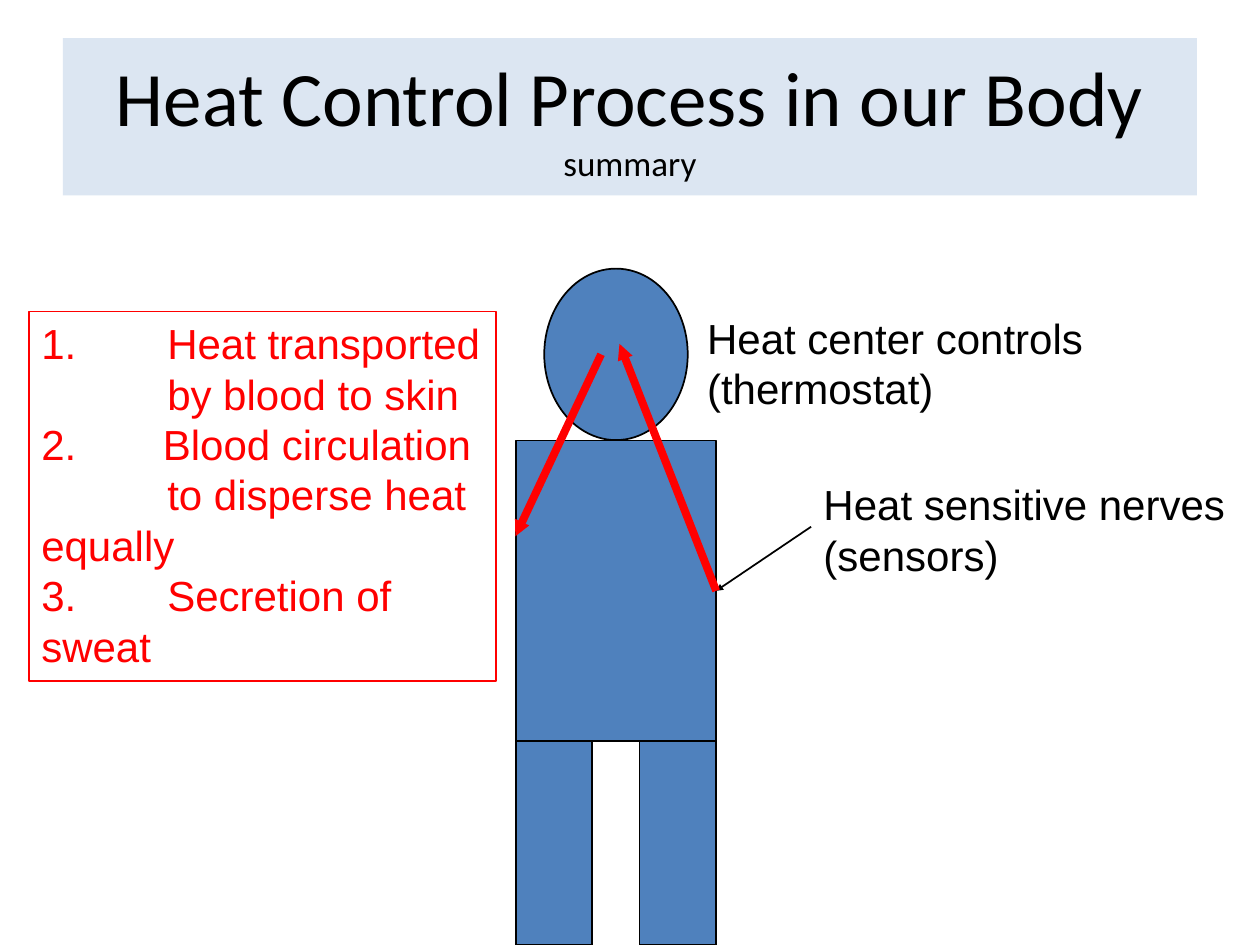
import pptx
import pptx.dml.color
import pptx.enum.shapes
import pptx.enum.text
import pptx.oxml.ns
import pptx.util
from lxml import etree

Pt = pptx.util.Pt
SHAPE = pptx.enum.shapes.MSO_SHAPE
ALIGN = pptx.enum.text.PP_ALIGN
ANCHOR = pptx.enum.text.MSO_ANCHOR
qn = pptx.oxml.ns.qn

BLACK, RED, BODY_BLUE, PALE_BLUE = "000000", "FF0000", "4F81BD", "DCE6F2"


def color(value):
    return pptx.dml.color.RGBColor.from_string(value)


def set_font(r, size, name, value):
    for key, val in {"size": Pt(size), "name": name}.items():
        setattr(r.font, key, val)
    r.font.color.rgb = color(value)


def add_box(shapes, kind, left, top, width, height, fill=None, line=None):
    s = shapes.add_shape(kind, Pt(left), Pt(top), Pt(width), Pt(height))
    s.shadow.inherit = False
    if fill:
        s.fill.solid()
        s.fill.fore_color.rgb = color(fill)
    else:
        s.fill.background()
    if line:
        s.line.color.rgb = color(line)
        s.line.width = Pt(1)
    else:
        s.line.fill.background()
    return s


def write_lines(tf, lines, value):
    for i, text in enumerate(lines):
        p = tf.paragraphs[0] if i == 0 else tf.add_paragraph()
        p.alignment = ALIGN.LEFT
        r = p.add_run()
        r.text = text
        set_font(r, 24, "Arial", value)


def number_paragraph(p, start, indent):
    """Give the paragraph an automatic number with a hanging indent."""
    pPr = p._p.get_or_add_pPr()
    pPr.set("marL", str(Pt(indent)))
    pPr.set("indent", str(-Pt(indent)))
    etree.SubElement(pPr, qn("a:buAutoNum"), type="arabicPeriod", startAt=str(start))


def set_tabs(p, step, count):
    """Set evenly spaced left tab stops."""
    tabs = etree.SubElement(p._p.get_or_add_pPr(), qn("a:tabLst"))
    for i in range(1, count + 1):
        etree.SubElement(tabs, qn("a:tab"), pos=str(Pt(step * i)), algn="l")


def add_label(shapes, left, top, width, lines):
    s = shapes.add_textbox(Pt(left), Pt(top), Pt(width), Pt(65.5))
    s.text_frame.word_wrap = False
    write_lines(s.text_frame, lines, BLACK)


def add_arrow(shapes, start, end, value, width):
    c = shapes.add_connector(pptx.enum.shapes.MSO_CONNECTOR.STRAIGHT,
                             *[Pt(v) for v in start + end])
    c.line.color.rgb = color(value)
    c.line.width = Pt(width)
    etree.SubElement(c.line._get_or_add_ln(), qn("a:tailEnd"),
                     type="triangle", w="sm", len="sm")
    etree.SubElement(c._element.spPr, qn("a:effectLst"))
    return c


def add_title(shapes):
    s = add_box(shapes, SHAPE.RECTANGLE, 36, 21.75, 648, 90, PALE_BLUE)
    tf = s.text_frame
    tf.word_wrap = True
    tf.vertical_anchor = ANCHOR.MIDDLE
    p = tf.paragraphs[0]
    p.alignment = ALIGN.CENTER
    r = p.add_run()
    r.text = "Heat Control Process in our Body"
    set_font(r, 44, "Calibri", BLACK)
    p.add_line_break()
    r = p.add_run()
    r.text = "summary"
    set_font(r, 20, "Calibri", BLACK)


def add_person(shapes):
    """Draw head, torso and legs as a group and return the torso."""
    parts = shapes.add_group_shape().shapes
    left, width, leg_width, hip = 294.75, 114.5, 43.75, 423.5
    add_box(parts, SHAPE.OVAL, 311, 153.5, 82, 98, BODY_BLUE, BLACK)
    torso = add_box(parts, SHAPE.RECTANGLE, left, 251.75, width, hip - 251.75,
                    BODY_BLUE, BLACK)
    for x in (left, left + width - leg_width):
        add_box(parts, SHAPE.RECTANGLE, x, hip, leg_width, 540 - hip, BODY_BLUE, BLACK)
    return torso


def add_steps(shapes):
    s = add_box(shapes, SHAPE.RECTANGLE, 16.5, 178, 267, 211, line=RED)
    tf = s.text_frame
    tf.word_wrap = True
    tf.vertical_anchor = ANCHOR.TOP
    write_lines(tf, ["1.\tHeat transported \tby blood to skin",
                     "Blood circulation",
                     "\tto disperse heat \tequally",
                     "3.\tSecretion of \tsweat"], RED)
    for i, p in enumerate(tf.paragraphs):
        if i == 1:
            number_paragraph(p, 2, 69.5)
        else:
            set_tabs(p, 72, 4)


def main():
    prs = pptx.Presentation()
    prs.slide_width, prs.slide_height = Pt(720), Pt(540)
    shapes = prs.slides.add_slide(prs.slide_layouts[6]).shapes

    add_title(shapes)
    torso = add_person(shapes)
    add_label(shapes, 463.5, 270, 246, ["Heat sensitive nerves", "(sensors)"])
    add_label(shapes, 397, 175, 232, ["Heat center controls", "(thermostat)"])
    add_steps(shapes)

    sensor = (409.25, 337.5)
    add_arrow(shapes, (463.5, 301), sensor, BLACK, 1).end_connect(torso, 3)
    add_arrow(shapes, sensor, (354, 196.5), RED, 4.5).begin_connect(torso, 3)
    add_arrow(shapes, (343.5, 202.5), (294.5, 306.5), RED, 4.5)

    prs.save("out.pptx")


if __name__ == "__main__":
    main()
